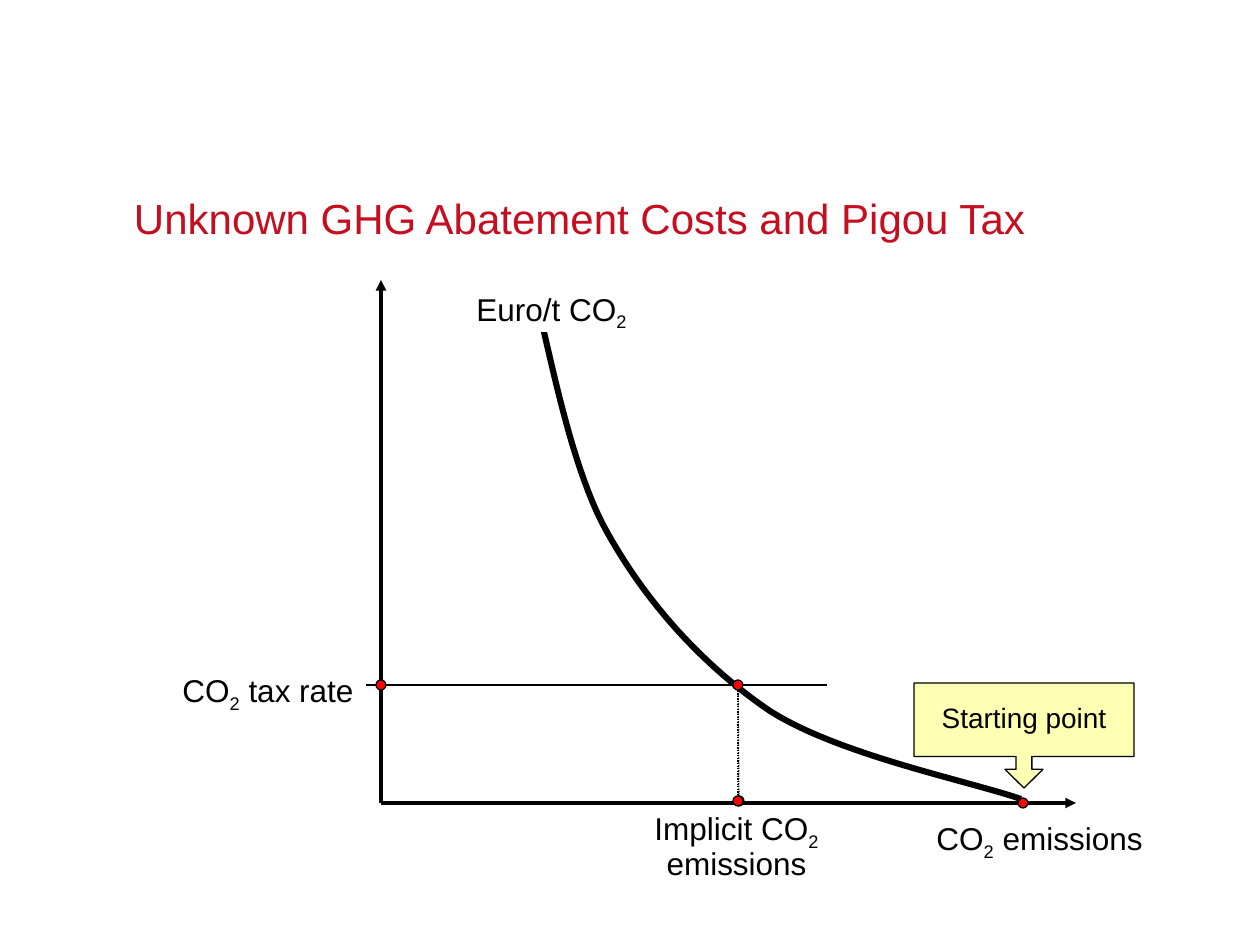
from dataclasses import dataclass

from lxml import etree
from pptx import Presentation
from pptx.dml.color import RGBColor
from pptx.enum.dml import MSO_LINE
from pptx.enum.shapes import MSO_CONNECTOR, MSO_SHAPE
from pptx.enum.text import MSO_ANCHOR, MSO_AUTO_SIZE, PP_ALIGN
from pptx.oxml.ns import qn
from pptx.util import Emu, Pt

PX = 914400 / 126
FONT = "Arial"
BLACK, WHITE, RED, YELLOW, CRIMSON = "000000", "FFFFFF", "FF0000", "FFFFB3", "C50E1F"
CENTER, RIGHT, LEFT = PP_ALIGN.CENTER, PP_ALIGN.RIGHT, PP_ALIGN.LEFT
DOTTED = MSO_LINE.ROUND_DOT
DOT_SIZE = 10
CURVE_STEPS = 24

# Positions shared by the parts of the diagram
AXIS_X, AXIS_Y = 381, 803
TAX_Y = 685
IMPLICIT_X = 738


@dataclass
class Label:
    box: tuple[int, int, int, int]
    before: str
    after: str
    align: PP_ALIGN = CENTER
    spacing: float = 0.9
    fill: str | None = WHITE


IMPLICIT = Label((615, 803, 243, 82), "Implicit CO", " emissions")
PRICE = Label((399, 284, 305, 48), "Euro/t CO", "")
EMISSIONS = Label((861, 809, 357, 52), "CO", " emissions", spacing=1.1, fill=None)
TAX_RATE = Label((100, 665, 266, 48), "CO", " tax rate", align=RIGHT)

# Abatement cost curve: start point, then two handles and an end per segment
COST_CURVE = [(533, 289),
              (546, 329), (567, 461), (607, 532),
              (646, 602), (702, 665), (770, 711),
              (839, 755), (969, 781), (1021, 799)]


def px(*lengths: int) -> list[Emu]:
    return [Emu(round(length * PX)) for length in lengths]


def rgb(color: str) -> RGBColor:
    return RGBColor.from_string(color)


def set_line(line, width: float) -> None:
    line.color.rgb = rgb(BLACK)
    line.width = Pt(width)


def add_run(paragraph, text: str, size: int, color: str = BLACK, subscript: bool = False) -> None:
    run = paragraph.add_run()
    run.text = text
    run.font.name = FONT
    run.font.size = Pt(size)
    run.font.color.rgb = rgb(color)
    if subscript:
        run._r.get_or_add_rPr().set("baseline", "-25000")


def set_margins(frame, horizontal: float, vertical: float) -> None:
    frame.margin_left = frame.margin_right = Pt(horizontal)
    frame.margin_top = frame.margin_bottom = Pt(vertical)


def add_filled(shapes, kind: MSO_SHAPE, box: tuple, fill: str, outlined: bool = True):
    shape = shapes.add_shape(kind, *px(*box))
    shape.shadow.inherit = False
    shape.fill.solid()
    shape.fill.fore_color.rgb = rgb(fill)
    if outlined:
        set_line(shape.line, 0.75)
    else:
        shape.line.fill.background()
    return shape


def add_dot(shapes, x: int, y: int) -> None:
    box = (x - DOT_SIZE // 2, y - DOT_SIZE // 2, DOT_SIZE, DOT_SIZE)
    add_filled(shapes, MSO_SHAPE.OVAL, box, RED)


def add_line(shapes, start: tuple, end: tuple, width: float = 0.75,
             dash: MSO_LINE | None = None, arrow: bool = False) -> None:
    line = shapes.add_connector(MSO_CONNECTOR.STRAIGHT, *px(*start, *end))
    set_line(line.line, width)
    if dash is not None:
        line.line.dash_style = dash
    if arrow:
        etree.SubElement(line.line._get_or_add_ln(), qn("a:tailEnd"), type="triangle")
    etree.SubElement(line._element.spPr, qn("a:effectLst"))


def add_label(shapes, label: Label) -> None:
    if label.fill:
        shape = add_filled(shapes, MSO_SHAPE.RECTANGLE, label.box, label.fill, outlined=False)
    else:
        shape = shapes.add_textbox(*px(*label.box))
    frame = shape.text_frame
    frame.word_wrap = True
    frame.auto_size = MSO_AUTO_SIZE.SHAPE_TO_FIT_TEXT
    frame.vertical_anchor = MSO_ANCHOR.TOP
    set_margins(frame, 7.2, 3.6)
    paragraph = frame.paragraphs[0]
    paragraph.alignment = label.align
    paragraph.line_spacing = label.spacing
    add_run(paragraph, label.before, 18)
    add_run(paragraph, "2", 18, subscript=True)
    if label.after:
        add_run(paragraph, label.after, 18)


def bezier_points(controls: list[tuple[int, int]]) -> list[tuple[float, float]]:
    points = [controls[0]]
    for first in range(0, len(controls) - 1, 3):
        segment = controls[first:first + 4]
        for step in range(1, CURVE_STEPS + 1):
            t = step / CURVE_STEPS
            weights = ((1 - t) ** 3, 3 * t * (1 - t) ** 2, 3 * t * t * (1 - t), t ** 3)
            points.append(tuple(sum(w * p[axis] for w, p in zip(weights, segment))
                                for axis in (0, 1)))
    return points


def add_curve(shapes, controls: list[tuple[int, int]], width: float) -> None:
    points = [(x * PX, y * PX) for x, y in bezier_points(controls)]
    builder = shapes.build_freeform(*points[0])
    builder.add_line_segments(points[1:], close=False)
    curve = builder.convert_to_shape()
    curve.shadow.inherit = False
    curve.fill.background()
    set_line(curve.line, width)


def set_title(title, text: str) -> None:
    title.left, title.top, title.width, title.height = px(134, 121, 1000, 122)
    frame = title.text_frame
    frame.word_wrap = True
    frame.auto_size = MSO_AUTO_SIZE.NONE
    frame.vertical_anchor = MSO_ANCHOR.BOTTOM
    set_margins(frame, 0, 0)
    paragraph = frame.paragraphs[0]
    paragraph.alignment = LEFT
    paragraph.line_spacing = Pt(30)
    add_run(paragraph, text, 24, CRIMSON)


def add_callout(shapes, text: str) -> None:
    callout = add_filled(shapes, MSO_SHAPE.DOWN_ARROW_CALLOUT, (914, 683, 220, 105), YELLOW)
    for index, value in enumerate((0.15, 0.181, 0.178, 0.7)):
        callout.adjustments[index] = value
    frame = callout.text_frame
    frame.word_wrap = False
    frame.vertical_anchor = MSO_ANCHOR.MIDDLE
    set_margins(frame, 7.2, 3.6)
    paragraph = frame.paragraphs[0]
    paragraph.alignment = CENTER
    paragraph.line_spacing = 0.9
    add_run(paragraph, text, 16)


def main() -> None:
    deck = Presentation()
    deck.slide_width, deck.slide_height = px(1260, 945)
    slide = deck.slides.add_slide(deck.slide_layouts[5])
    shapes = slide.shapes
    set_title(shapes.title, "Unknown GHG Abatement Costs and Pigou Tax")

    # Implicit emissions and tax level
    add_line(shapes, (IMPLICIT_X, 683), (IMPLICIT_X, 809), dash=DOTTED)
    add_label(shapes, IMPLICIT)
    add_line(shapes, (827, TAX_Y), (363, TAX_Y))

    # Axes and cost curve
    add_line(shapes, (AXIS_X, AXIS_Y), (1076, AXIS_Y), 2, arrow=True)
    add_curve(shapes, COST_CURVE, 3.5)
    add_line(shapes, (AXIS_X, AXIS_Y), (AXIS_X, 280), 2, arrow=True)
    add_label(shapes, PRICE)
    add_label(shapes, EMISSIONS)

    # Starting point
    add_dot(shapes, 1023, AXIS_Y)
    add_callout(shapes, "Starting point")

    # Tax rate on the price axis
    add_label(shapes, TAX_RATE)
    add_dot(shapes, IMPLICIT_X + 1, 801)
    add_dot(shapes, AXIS_X, TAX_Y)

    # Drop from the curve to the emissions axis
    drop = shapes.add_group_shape().shapes
    add_line(drop, (IMPLICIT_X, 680), (IMPLICIT_X + 1, 806), dash=DOTTED)
    for y in (TAX_Y, 801):
        add_dot(drop, IMPLICIT_X, y)

    deck.save("out.pptx")


if __name__ == "__main__":
    main()
